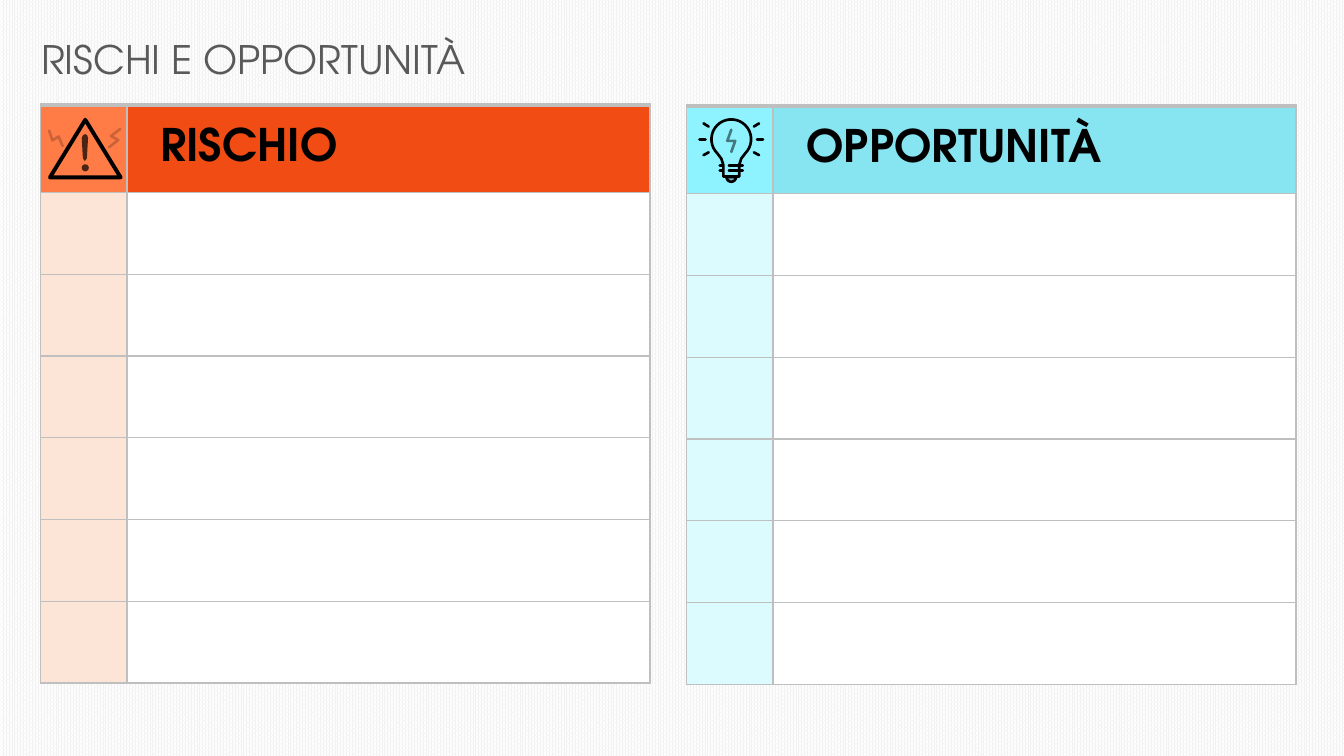
"""Builds the slide of risks and opportunities: two tables with icons in their headers."""
from math import cos, radians, sin

from lxml import etree
from pptx import Presentation
from pptx.dml.color import RGBColor
from pptx.enum.dml import MSO_PATTERN
from pptx.enum.shapes import MSO_SHAPE
from pptx.enum.text import MSO_ANCHOR
from pptx.oxml.ns import qn
from pptx.util import Cm, Pt

PERCENT_80 = MSO_PATTERN.PERCENT_80
OVAL = MSO_SHAPE.OVAL
MIDDLE = MSO_ANCHOR.MIDDLE

BLACK = RGBColor(0x00, 0x00, 0x00)
WHITE = RGBColor(0xFF, 0xFF, 0xFF)
PAPER = RGBColor(0xF2, 0xF2, 0xF2)
TITLE_GREY = RGBColor(0x59, 0x59, 0x59)
BORDER_GREY = RGBColor(0xBF, 0xBF, 0xBF)
FONT = "TeX Gyre Adventor"

TITLE = "RISCHI E OPPORTUNITÀ"
RISK = {
    "heading": "RISCHIO", "left": 1.02, "top": 2.64,
    "icon_fill": RGBColor(0xFF, 0x7C, 0x46),
    "heading_fill": RGBColor(0xF0, 0x4C, 0x13),
    "number_fill": RGBColor(0xFC, 0xE4, 0xD6),
}
OPPORTUNITY = {
    "heading": "OPPORTUNITÀ", "left": 17.3, "top": 2.67,
    "icon_fill": RGBColor(0x8E, 0xF3, 0xFF),
    "heading_fill": RGBColor(0x86, 0xE5, 0xF1),
    "number_fill": RGBColor(0xDC, 0xFB, 0xFF),
}
COLUMN_WIDTHS = (2.18, 13.18)
HEADER_HEIGHT = 2.21
ROW_HEIGHT = 2.06
BLANK_ROWS = 6

ICON_CENTER = 1.13
TRIANGLE = [(0.24, 1.83), (1.13, 0.38), (2.02, 1.83)]
SIDE_BOLTS = [
    [(0.22, 0.65), (0.3, 0.9), (0.46, 0.8), (0.56, 1.04)],
    [(2.01, 0.61), (1.78, 0.79), (1.96, 0.89), (1.73, 1.07)],
]
EXCLAMATION = [(1.04, 0.84), (1.07, 0.77), (1.13, 0.74), (1.18, 0.77),
               (1.2, 0.84), (1.17, 1.35), (1.12, 1.42), (1.07, 1.35)]
DOT_Y, DOT_RADIUS = 1.59, 0.09

GLOBE_Y, GLOBE_RADIUS = 0.84, 0.5
NECK = [(1.38, 1.33), (1.33, 1.49), (1.33, 1.78)]
BASE_Y, BASE_RADIUS = 1.79, 0.12
THREADS = [[(left, y), (right, y)] for y in (1.5, 1.63)
           for left, right in ((0.84, 0.91), (1.07, 1.42))]
RAYS = [[(1.78, 0.84), (1.93, 0.84)],
        [(1.7, 0.52), (1.83, 0.44)],
        [(1.7, 1.17), (1.83, 1.24)]]
BULB_BOLT = [(1.13, 0.6), (1.03, 0.88), (1.23, 0.88), (1.13, 1.16)]


def set_opacity(fill, percent):
    color = fill._xPr.find(qn("a:solidFill"))[0]
    etree.SubElement(color, qn("a:alpha"), val=str(percent * 1000))


def add_run(paragraph, text, size, color, bold=False):
    run = paragraph.add_run()
    run.text = text
    run.font.name = FONT
    run.font.size = Pt(size)
    run.font.bold = bold
    run.font.color.rgb = color


def set_borders(cell, **widths):
    properties = cell._tc.get_or_add_tcPr()
    for index, side in enumerate("LRTB"):
        line = etree.Element(qn("a:ln" + side), w=str(Pt(widths.get(side, 1))))
        solid = etree.SubElement(line, qn("a:solidFill"))
        etree.SubElement(solid, qn("a:srgbClr"), val=str(BORDER_GREY))
        properties.insert(index, line)


def add_panel(slide, panel):
    height = HEADER_HEIGHT + BLANK_ROWS * ROW_HEIGHT
    table = slide.shapes.add_table(
        BLANK_ROWS + 1, 2, Cm(panel["left"]), Cm(panel["top"]),
        Cm(sum(COLUMN_WIDTHS)), Cm(height)).table
    table.first_row = table.horz_banding = False
    for column, width in zip(table.columns, COLUMN_WIDTHS):
        column.width = Cm(width)
    for index, row in enumerate(table.rows):
        is_header = index == 0
        row.height = Cm(HEADER_HEIGHT if is_header else ROW_HEIGHT)
        fills = ((panel["icon_fill"], panel["heading_fill"]) if is_header
                 else (panel["number_fill"], WHITE))
        for cell, color, right_width in zip(row.cells, fills, (1, 2.25)):
            cell.fill.solid()
            cell.fill.fore_color.rgb = color
            set_borders(cell, T=3 if is_header else 1, R=right_width)
    heading = table.cell(0, 1)
    heading.vertical_anchor = MIDDLE
    heading.margin_left = Cm(0.84)
    heading.margin_right = heading.margin_top = Cm(0.03)
    heading.margin_bottom = 0
    add_run(heading.text_frame.paragraphs[0], panel["heading"], 32, BLACK, True)


def arc(center_y, radius, start, end):
    return [(ICON_CENTER + radius * cos(radians(angle)),
             center_y + radius * sin(radians(angle)))
            for angle in range(start, end + 1, 10)]


def mirror(points):
    return [(2 * ICON_CENTER - x, y) for x, y in points]


def add_outline(group, panel, points, closed=False):
    places = [(Cm(panel["left"] + x), Cm(panel["top"] + y)) for x, y in points]
    builder = group.shapes.build_freeform(*places[0], scale=1.0)
    builder.add_line_segments(places[1:], close=closed)
    outline = builder.convert_to_shape()
    outline.shadow.inherit = False
    return outline


def add_stroke(group, panel, points, width=1.9, opacity=100, closed=False):
    stroke = add_outline(group, panel, points, closed)
    stroke.fill.background()
    stroke.line.width = Pt(width)
    stroke.line.fill.solid()
    stroke.line.color.rgb = BLACK
    set_opacity(stroke.line.fill, opacity)
    stroke.line._ln.set("cap", "rnd")
    etree.SubElement(stroke.line._ln, qn("a:round"))
    return stroke


def fill_black(shape, opacity):
    shape.fill.solid()
    shape.fill.fore_color.rgb = BLACK
    set_opacity(shape.fill, opacity)


def add_warning(slide, panel):
    group = slide.shapes.add_group_shape()
    for bolt in SIDE_BOLTS:
        add_stroke(group, panel, bolt, opacity=20)
    add_stroke(group, panel, TRIANGLE, width=2.8, closed=True)
    bar = add_outline(group, panel, EXCLAMATION, closed=True)
    dot = group.shapes.add_shape(
        OVAL, Cm(panel["left"] + ICON_CENTER - DOT_RADIUS),
        Cm(panel["top"] + DOT_Y - DOT_RADIUS), Cm(2 * DOT_RADIUS), Cm(2 * DOT_RADIUS))
    dot.shadow.inherit = False
    for part in (bar, dot):
        fill_black(part, 70)
        part.line.fill.background()


def add_bulb(slide, panel):
    group = slide.shapes.add_group_shape()
    base = add_stroke(group, panel, arc(BASE_Y, BASE_RADIUS, 0, 180), closed=True)
    fill_black(base, 24)
    globe = arc(GLOBE_Y, GLOBE_RADIUS, 135, 405)
    add_stroke(group, panel, globe + NECK + mirror(NECK)[::-1], closed=True)
    for line in THREADS + RAYS + [mirror(ray) for ray in RAYS]:
        add_stroke(group, panel, line)
    add_stroke(group, panel, BULB_BOLT, opacity=50)


def main():
    deck = Presentation()
    deck.slide_width, deck.slide_height = Cm(33.87), Cm(19.05)
    slide = deck.slides.add_slide(deck.slide_layouts[6])
    background = slide.background.fill
    background.patterned()
    background.pattern = PERCENT_80
    background.fore_color.rgb = PAPER
    background.back_color.rgb = WHITE

    title = slide.shapes.add_textbox(Cm(0.79), Cm(0.76), Cm(30.25), Cm(1.45))
    title.text_frame.word_wrap = True
    add_run(title.text_frame.paragraphs[0], TITLE, 28, TITLE_GREY)
    for panel in (RISK, OPPORTUNITY):
        add_panel(slide, panel)
    add_warning(slide, RISK)
    add_bulb(slide, OPPORTUNITY)
    deck.save("out.pptx")


if __name__ == "__main__":
    main()
